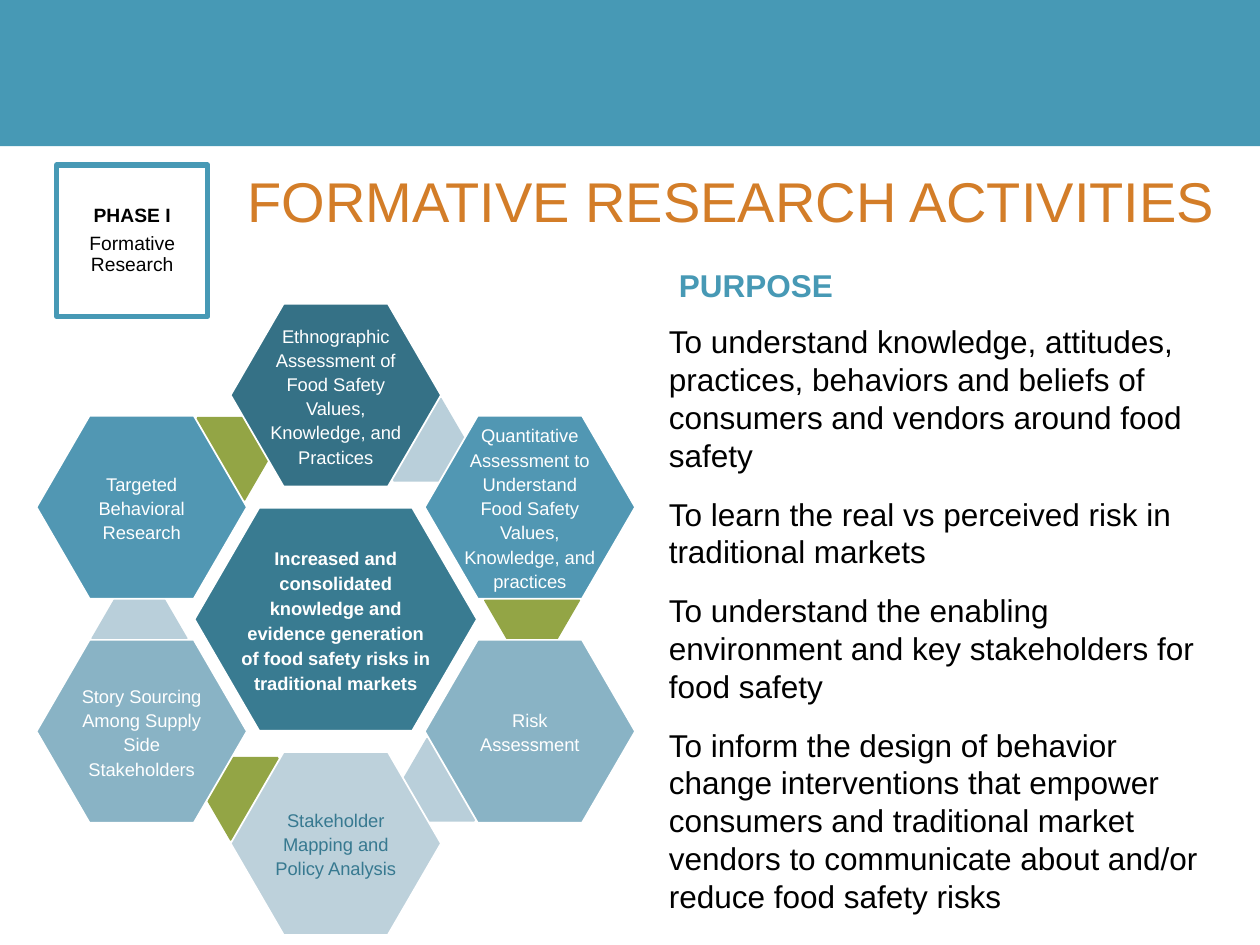
import collections
import math

import pptx
import pptx.dml.color
import pptx.enum.shapes
import pptx.enum.text
import pptx.util

SHAPES = pptx.enum.shapes.MSO_SHAPE
ALIGN = pptx.enum.text.PP_ALIGN
ANCHOR = pptx.enum.text.MSO_ANCHOR
AUTO_SIZE = pptx.enum.text.MSO_AUTO_SIZE

COLUMNS, ROWS = 100, 75
CELL = pptx.util.Inches(10) // COLUMNS

COLORS = {
    "blue": "4799B5", "orange": "D37D28", "black": "000000", "white": "FFFFFF",
    "green": "93A545", "mist": "B9CFDA", "hub": "397B91", "deep": "357186",
    "sky": "5197B3", "haze": "89B3C5", "pale": "BDD1DB", "teal": "377990",
}

# Lengths are in grid columns and rows.
Box = collections.namedtuple("Box", "left top width height")

ACTIVITIES = [  # clockwise from the top: text, fill, text colour
    ("Ethnographic Assessment of Food Safety Values, Knowledge, and Practices", "deep", "white"),
    ("Quantitative Assessment to Understand Food Safety Values, Knowledge, and practices",
     "sky", "white"),
    ("Risk Assessment", "haze", "white"),
    ("Stakeholder Mapping and Policy Analysis", "pale", "teal"),
    ("Story Sourcing Among Supply Side Stakeholders", "haze", "white"),
    ("Targeted Behavioral Research", "sky", "white"),
]
HUB_TEXT = ("Increased and consolidated knowledge and evidence generation "
            "of food safety risks in traditional markets")
PURPOSES = [
    "To understand knowledge, attitudes, practices, behaviors and beliefs of "
    "consumers and vendors around food safety",
    "To learn the real vs perceived risk in traditional markets",
    "To understand the enabling environment and key stakeholders for food safety",
    "To inform the design of behavior change interventions that empower consumers and "
    "traditional market vendors to communicate about and/or reduce food safety risks",
]


def rgb(name):
    return pptx.dml.color.RGBColor.from_string(COLORS[name])


def to_emu(box):
    return [round(length * CELL) for length in box]


def centered_box(x, y, width, height):
    return Box(x - width / 2, y - height / 2, width, height)


def add_panel(page, preset, box, fill=None, line=None, line_width=1):
    panel = page.shapes.add_shape(preset, *to_emu(box))
    panel.shadow.inherit = False
    if fill:
        panel.fill.solid()
        panel.fill.fore_color.rgb = rgb(fill)
    else:
        panel.fill.background()
    if line:
        panel.line.color.rgb = rgb(line)
        panel.line.width = pptx.util.Pt(line_width)
    else:
        panel.line.fill.background()
    return panel


def set_text(shape, texts, size, color, bolds=(False,), inset=None, frame_format=None, **para_format):
    """Write one paragraph per text; a single bold value serves every paragraph."""
    frame = shape.text_frame
    frame.word_wrap = True
    for name, value in (frame_format or {}).items():
        setattr(frame, name, value)
    if inset is not None:
        for side in ("left", "top", "right", "bottom"):
            setattr(frame, f"margin_{side}", pptx.util.Inches(inset))
    for index, text in enumerate(texts):
        para = frame.paragraphs[0] if index == 0 else frame.add_paragraph()
        span = para.add_run()
        span.text = text
        for name, value in para_format.items():
            setattr(para, name, value)
        font_format = {"name": "Arial", "size": pptx.util.Pt(size),
                       "bold": bolds[index % len(bolds)]}
        for name, value in font_format.items():
            setattr(span.font, name, value)
        span.font.color.rgb = rgb(color)


def add_text(page, box, texts, size, color, **options):
    set_text(page.shapes.add_textbox(*to_emu(box)), texts, size, color, **options)


def add_hexagon(page, box, fill, line=None):
    hexagon = add_panel(page, SHAPES.HEXAGON, box, fill, line)
    hexagon.adjustments[0] = 0.29


def add_labelled_hexagon(page, box, fill, text, color, text_share, bold=False, spacing=1.1):
    add_hexagon(page, box, fill, "white")
    text_box = centered_box(box.left + box.width / 2, box.top + box.height / 2,
                            box.width * text_share, box.height * text_share)
    add_text(page, text_box, [text], 10.5, color, bolds=(bold,), inset=0.02,
             frame_format={"vertical_anchor": ANCHOR.MIDDLE},
             alignment=ALIGN.CENTER, line_spacing=spacing)


def add_activity_ring(page, box):
    """Six activities around a hub, with alternating links tucked behind them."""
    center_x, center_y = box.left + box.width / 2, box.top + box.height / 2
    node_width, link_width, hub_width = (box.width * share for share in (0.35, 0.16, 0.47))
    ratio = 0.87
    radius = (box.height - node_width * ratio) / 2
    step = 360 / len(ACTIVITIES)

    def box_on_ring(degrees, distance, width):
        angle = math.radians(degrees)
        return centered_box(center_x + distance * math.sin(angle),
                            center_y - distance * math.cos(angle), width, width * ratio)

    for index in range(len(ACTIVITIES)):
        add_hexagon(page, box_on_ring(24.5 + index * step, radius * 0.88, link_width),
                    ("mist", "green")[index % 2])
    add_labelled_hexagon(page, centered_box(center_x, center_y, hub_width, hub_width * 0.79),
                         "hub", HUB_TEXT, "white", 0.69, bold=True, spacing=1.14)
    for index, (text, fill, color) in enumerate(ACTIVITIES):
        add_labelled_hexagon(page, box_on_ring(index * step, radius, node_width),
                             fill, text, color, 0.67)


def add_heading(page, box):
    add_text(page, box, ["FORMATIVE RESEARCH ACTIVITIES"], 32, "orange",
             frame_format={"auto_size": AUTO_SIZE.SHAPE_TO_FIT_TEXT}, alignment=ALIGN.CENTER)


def add_phase_badge(page, box):
    badge = add_panel(page, SHAPES.RECTANGLE, box, line="blue", line_width=3)
    set_text(badge, ["PHASE I", "Formative Research"], 11, "black", bolds=(True, False),
             inset=0.03, frame_format={"vertical_anchor": ANCHOR.MIDDLE},
             alignment=ALIGN.CENTER, line_spacing=0.9, space_after=pptx.util.Pt(4))


def add_purpose(page, box):
    title_height = 4.5
    fit = {"auto_size": AUTO_SIZE.SHAPE_TO_FIT_TEXT}
    add_text(page, Box(box.left, box.top + title_height, box.width, box.height - title_height),
             PURPOSES, 18, "black", frame_format=fit, space_after=pptx.util.Pt(12))
    add_text(page, Box(box.left + 0.8, box.top, box.width / 2, 4), ["PURPOSE"], 18, "blue",
             bolds=(True,), frame_format=fit)


def main():
    deck = pptx.Presentation()
    deck.slide_width, deck.slide_height = COLUMNS * CELL, ROWS * CELL
    page = deck.slides.add_slide(deck.slide_layouts[6])
    add_panel(page, SHAPES.RECTANGLE, Box(0, 0, COLUMNS, 11.6), "blue")
    add_heading(page, Box(18.3, 12.7, 79.5, 6.4))
    add_phase_badge(page, Box(4.5, 13.1, 12, 12))
    add_activity_ring(page, Box(2.8, 24.1, 47.7, 50.1))
    add_purpose(page, Box(52.1, 20.6, 45.7, 53))
    deck.save("out.pptx")


if __name__ == "__main__":
    main()
